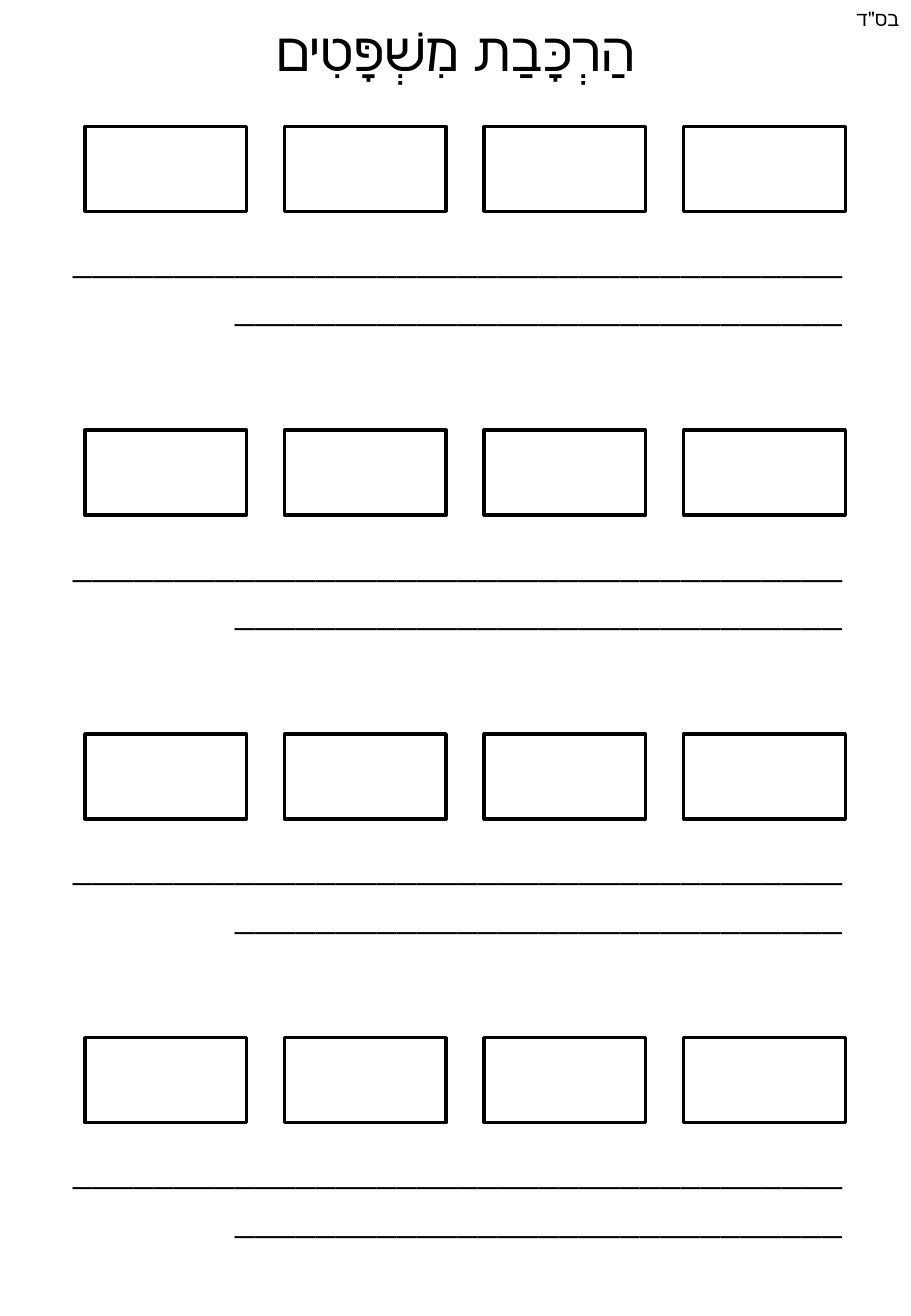
import pptx
import pptx.util
import pptx.dml.color
import pptx.enum.lang
import pptx.enum.shapes
import pptx.enum.text
import pptx.oxml.ns
import lxml.etree

Inches = pptx.util.Inches
ALIGN = pptx.enum.text.PP_ALIGN
COLORS = {"ink": "000000", "paper": "FFFFFF"}


def rgb(name):
    return pptx.dml.color.RGBColor.from_string(COLORS[name])


def write_rtl(sp, text, size, font, align):
    """Fill a shape with one right-to-left paragraph."""
    tf = sp.text_frame
    tf.word_wrap = True
    tf.auto_size = pptx.enum.text.MSO_AUTO_SIZE.SHAPE_TO_FIT_TEXT
    tf.vertical_anchor = pptx.enum.text.MSO_ANCHOR.TOP
    p = tf.paragraphs[0]
    p.alignment = align
    p._p.get_or_add_pPr().set("rtl", "1")
    r = p.add_run()
    r.text = text
    r.font.size = pptx.util.Pt(size)
    r.font.name = font
    r.font.language_id = pptx.enum.lang.MSO_LANGUAGE_ID.HEBREW
    r.font.color.rgb = rgb("ink")
    # Hebrew takes the theme's complex-script body font
    cs = lxml.etree.SubElement(r._r.get_or_add_rPr(), pptx.oxml.ns.qn("a:cs"))
    cs.set("typeface", "+mn-cs")


prs = pptx.Presentation()
prs.slide_width = Inches(7.5)
prs.slide_height = Inches(10.83)
s = prs.slides.add_slide(prs.slide_layouts[5])

# Title
title = s.shapes.title
title.left, title.top = Inches(0), Inches(0.09)
title.width, title.height = Inches(7.5), Inches(0.64)
write_rtl(title, "הַרְכָּבַת מִשְׁפָּטִים", 32, "Arial", ALIGN.CENTER)

# Corner note
note = s.shapes.add_textbox(Inches(4.45), Inches(0), Inches(3.05), Inches(0.3))
write_rtl(note, "בס\"ד", 12, "Arial", ALIGN.RIGHT)

# Four exercises: a row of word boxes, then lines to write on
for row in range(4):
    top = 1.04 + 2.5 * row
    for col in range(4):
        sp = s.shapes.add_shape(
            pptx.enum.shapes.MSO_SHAPE.RECTANGLE,
            Inches(0.7 + 4.93 * col / 3), Inches(top), Inches(1.33), Inches(0.7))
        sp.shadow.inherit = False
        sp.fill.solid()
        sp.fill.fore_color.rgb = rgb("paper")
        sp.line.color.rgb = rgb("ink")
        sp.line.width = pptx.util.Pt(2)
    lines = s.shapes.add_textbox(
        Inches(0.47), Inches(top + 0.81), Inches(6.56), Inches(0.91))
    write_rtl(lines, "_" * 68, 24, "Calibri", ALIGN.RIGHT)

prs.save("out.pptx")
